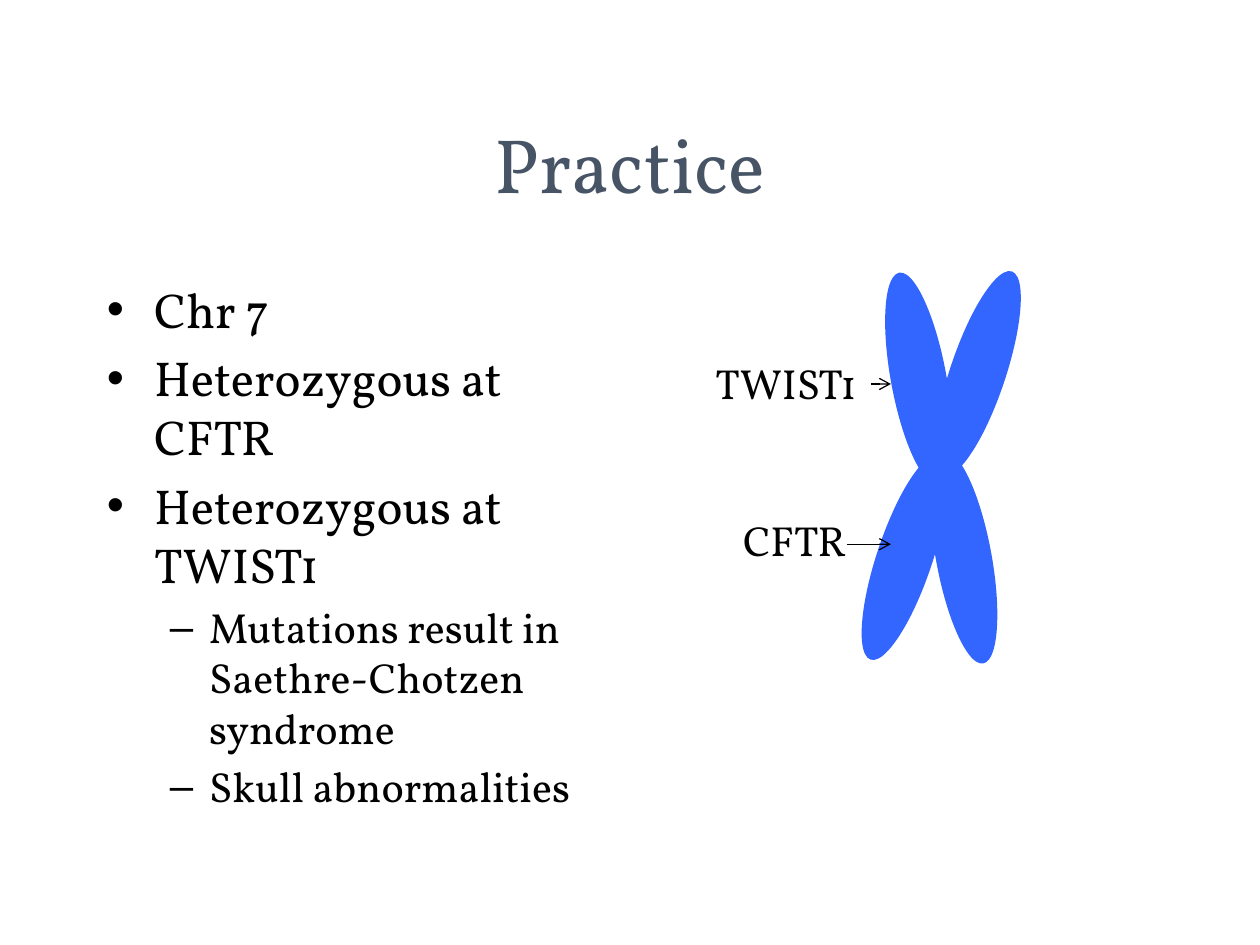
from lxml import etree
from pptx import Presentation
from pptx import util as u
from pptx.dml.color import RGBColor
from pptx.enum import shapes, text
from pptx.oxml.ns import qn

COLOURS = {"title": "465466", "ink": "000000", "chromatid": "3366FF"}
FONT = "Vollkorn"


def write(paragraph, words, size=24, colour="ink", level=0):
    paragraph.level = level
    run = paragraph.add_run()
    run.text = words
    run.font.name = FONT
    run.font.size = u.Pt(size)
    run.font.color.rgb = RGBColor.from_string(COLOURS[colour])


def place(shape, left, top, width, height):
    shape.left, shape.top = u.Cm(left), u.Cm(top)
    shape.width, shape.height = u.Cm(width), u.Cm(height)


presentation = Presentation()
presentation.slide_width, presentation.slide_height = u.Cm(25.4), u.Cm(19.05)
slide = presentation.slides.add_slide(presentation.slide_layouts[1])

# Title and list
title, body = slide.placeholders
place(title, 1.9, 1.7, 21.6, 3.17)
write(title.text_frame.paragraphs[0], "Practice", size=44, colour="title")

place(body, 1.9, 5.5, 10.59, 11.43)
items = [
    ("Chr 7", 0),
    ("Heterozygous at CFTR", 0),
    ("Heterozygous at TWIST1", 0),
    ("Mutations result in Saethre-Chotzen syndrome", 1),
    ("Skull abnormalities", 1),
]
for index, (words, level) in enumerate(items):
    frame = body.text_frame
    paragraph = frame.add_paragraph() if index else frame.paragraphs[0]
    write(paragraph, words, size=24 if level else 28, level=level)
for placeholder in (title, body):
    placeholder.text_frame.auto_size = text.MSO_AUTO_SIZE.NONE

# Chromosome: four chromatid arms
chromosome = slide.shapes.add_group_shape()
for left, top, rotation in [
    (19.15, 5.36, 18.5),
    (18.87, 9.07, -10.4),
    (17.96, 5.46, -10.4),
    (17.68, 9.07, 18.5),
]:
    arm = chromosome.shapes.add_shape(
        shapes.MSO_SHAPE.OVAL, u.Cm(left), u.Cm(top), u.Cm(1.12), u.Cm(4.34)
    )
    arm.rotation = rotation
    arm.shadow.inherit = False
    arm.fill.solid()
    arm.fill.fore_color.rgb = RGBColor.from_string(COLOURS["chromatid"])
    arm.line.fill.background()

# Gene labels, each with an arrow to its locus
locus_x = 17.96
for gene, left, top, width, arrow_x, arrow_y in [
    ("CFTR", 14.73, 10.24, 4.17, 17.07, 10.97),
    ("TWIST1", 14.17, 7.09, 3.78, 17.55, 7.74),
]:
    label = slide.shapes.add_textbox(u.Cm(left), u.Cm(top), u.Cm(width), u.Cm(1.27))
    label.text_frame.word_wrap = True
    write(label.text_frame.paragraphs[0], gene)

    arrow = slide.shapes.add_connector(
        shapes.MSO_CONNECTOR.STRAIGHT,
        u.Cm(arrow_x), u.Cm(arrow_y), u.Cm(locus_x), u.Cm(arrow_y),
    )
    arrow.line.width = u.Pt(0.75)
    arrow.line.color.rgb = RGBColor.from_string(COLOURS["ink"])
    etree.SubElement(arrow.line._get_or_add_ln(), qn("a:tailEnd"), type="arrow")
    etree.SubElement(arrow._element.spPr, qn("a:effectLst"))

presentation.save("out.pptx")
